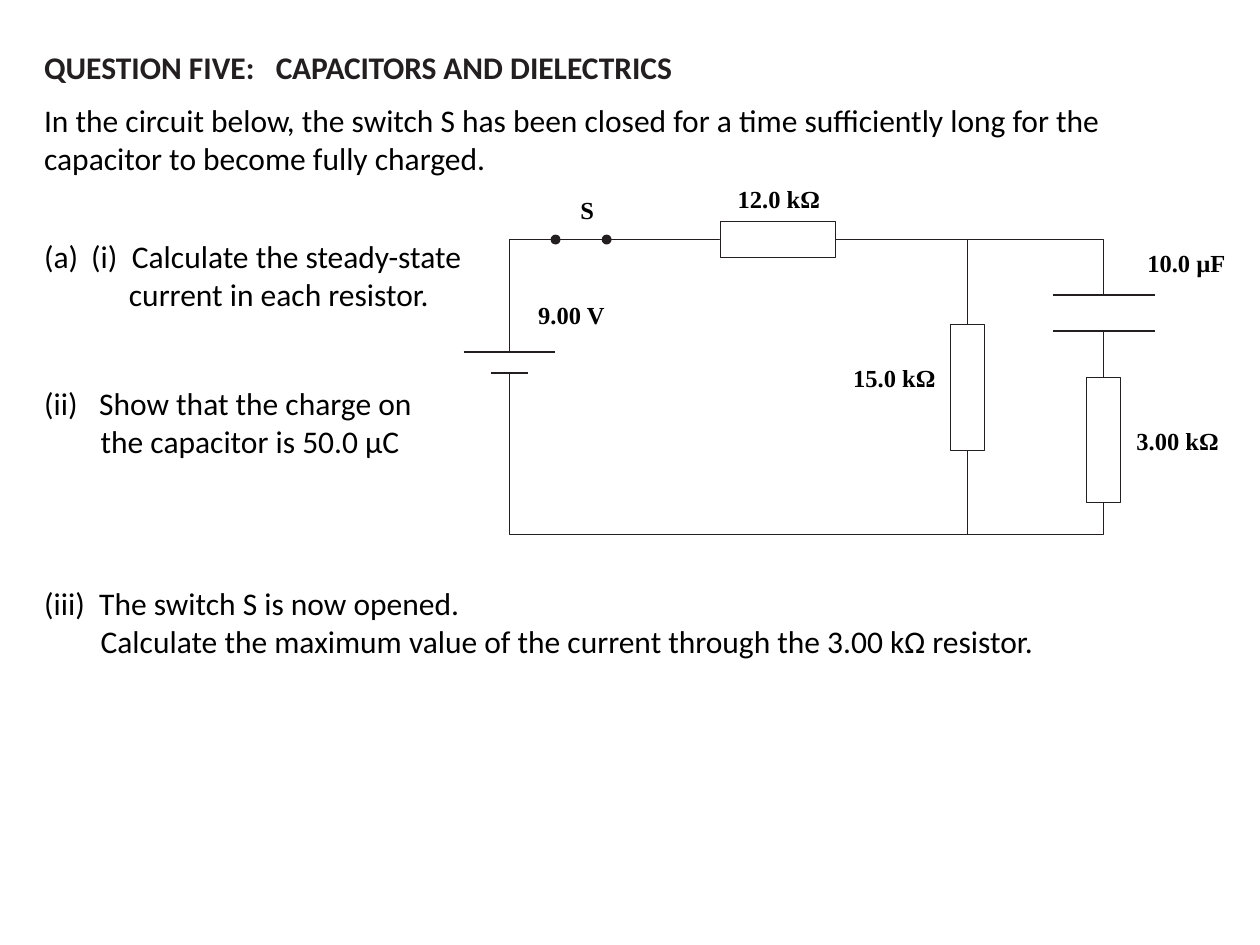
from lxml.etree import SubElement
from pptx import Presentation
from pptx.dml.color import RGBColor
from pptx.enum.shapes import MSO_CONNECTOR as Link, MSO_SHAPE as Preset
from pptx.enum.text import MSO_AUTO_SIZE as AutoSize
from pptx.oxml.ns import qn
from pptx.util import Cm, Pt

INK = RGBColor(0x23, 0x1F, 0x20)
BLACK = RGBColor(0, 0, 0)
WHITE = RGBColor(0xFF, 0xFF, 0xFF)

HEADING = {"name": "Calibri", "size": Pt(18), "bold": True}
BODY = {"name": "Calibri", "size": Pt(18), "bold": False}
LABEL = {"name": "Times New Roman", "size": Pt(14), "bold": True}

TOP, BOTTOM = 0, 2
BATTERY_X, SHUNT_X, CAPACITOR_X = 10.27, 19.5, 22.25
TOP_RAIL, BOTTOM_RAIL = 4.83, 10.78
BATTERY_PLATES = ((7.1, 1.85), (7.52, 0.75))
CAPACITOR_PLATES = ((5.95, 2.05), (6.67, 2.05))
TEXT_LEFT = 0.64

LABELS = (
    ("15.0 kΩ", 16.95, 7.19, 2.18),
    ("12.0 kΩ", 14.62, 3.58, 2.18),
    ("3.00 kΩ", 22.66, 8.46, 2.18),
    ("10.0 µF", 22.88, 4.88, 2.11),
    ("9.00 V", 10.6, 5.92, 1.85),
    ("S", 11.45, 3.81, 0.79),
)

QUESTIONS = (
    (4.65, 9.1, "(i)\tCalculate the steady-state", "current in each resistor.",
     "alphaLcParenBoth", 1, 0.95, 1.71),
    (7.62, 8.69, "Show that the charge on", "the capacitor is 50.0 µC",
     "romanLcParenBoth", 2, 1.11, 1.14),
    (11.65, 21.8, "The switch S is now opened.",
     "Calculate the maximum value of the current through the 3.00 kΩ resistor.",
     "romanLcParenBoth", 3, 1.11, 1.14),
)


def style_run(run, style, color):
    for attribute, value in style.items():
        setattr(run.font, attribute, value)
    run.font.color.rgb = color


def add_text(slide, lines, left, top, width, height, style, color=BLACK, wrap=True):
    box = slide.shapes.add_textbox(Cm(left), Cm(top), Cm(width), Cm(height))
    frame = box.text_frame
    frame.word_wrap = wrap
    frame.auto_size = AutoSize.SHAPE_TO_FIT_TEXT
    frame.text = "\n".join(lines)
    for paragraph in frame.paragraphs:
        for run in paragraph.runs:
            style_run(run, style, color)
    return frame.paragraphs


def set_indent(paragraph, margin, hanging=0):
    properties = paragraph._p.get_or_add_pPr()
    properties.set("marL", str(Cm(margin)))
    properties.set("indent", str(-Cm(hanging)))
    return properties


def add_tab(properties, position):
    tabs = SubElement(properties, qn("a:tabLst"))
    SubElement(tabs, qn("a:tab"), pos=str(Cm(position)), algn="l")


def add_heading(slide):
    heading = add_text(slide, ("QUESTION FIVE:\t",),
                       TEXT_LEFT, 0.85, 16.93, 1.03, HEADING, INK)[0]
    add_tab(heading._p.get_or_add_pPr(), 4.67)
    for words, spacing in (("CAPACITORS ", -10), ("AND DIELECTRICS", 0)):
        run = heading.add_run()
        run.text = words
        style_run(run, HEADING, INK)
        run._r.get_or_add_rPr().set("spc", str(spacing))


def add_question(slide, top, width, first, second, scheme, start, hanging, margin):
    numbered, continued = add_text(
        slide, (first, second), TEXT_LEFT, top, width, 1.8, BODY)
    properties = set_indent(numbered, hanging, hanging)
    SubElement(properties, qn("a:buFont"), typeface="+mj-lt")
    SubElement(properties, qn("a:buAutoNum"), type=scheme, startAt=str(start))
    if "\t" in first:
        add_tab(properties, 1.77)
    set_indent(continued, margin)


def set_line(shape, width):
    shape.line.color.rgb = INK
    shape.line.width = Pt(width)


def add_straight(slide, start, end, width=0.5):
    wire = slide.shapes.add_connector(
        Link.STRAIGHT, *(Cm(value) for value in (*start, *end)))
    set_line(wire, width)
    SubElement(wire._element.spPr, qn("a:effectLst"))
    return wire


def add_bent_wire(slide, *corners):
    start, *rest = [(Cm(x), Cm(y)) for x, y in corners]
    builder = slide.shapes.build_freeform(*start)
    builder.add_line_segments(rest, close=False)
    wire = builder.convert_to_shape()
    wire.shadow.inherit = False
    wire.fill.background()
    set_line(wire, 0.5)


def add_plates(slide, center, plates):
    for y, width in plates:
        add_straight(slide, (center - width / 2, y), (center + width / 2, y), 1)


def add_part(slide, preset, center, middle, width, height, fill):
    part = slide.shapes.add_shape(
        preset, Cm(center - width / 2), Cm(middle - height / 2), Cm(width), Cm(height))
    part.shadow.inherit = False
    part.fill.solid()
    part.fill.fore_color.rgb = fill
    return part


def add_resistor(slide, center, middle, width, height):
    resistor = add_part(slide, Preset.RECTANGLE, center, middle, width, height, WHITE)
    set_line(resistor, 0.5)
    return resistor


def add_contact(slide, center):
    contact = add_part(slide, Preset.OVAL, center, TOP_RAIL, 0.2, 0.2, INK)
    contact.line.fill.background()


def add_circuit(slide):
    battery_top, battery_bottom = ((BATTERY_X, y) for y, _ in BATTERY_PLATES)
    capacitor_top, capacitor_bottom = ((CAPACITOR_X, y) for y, _ in CAPACITOR_PLATES)
    add_bent_wire(slide, battery_top, (BATTERY_X, TOP_RAIL),
                  (CAPACITOR_X, TOP_RAIL), capacitor_top)
    add_bent_wire(slide, capacitor_bottom, (CAPACITOR_X, BOTTOM_RAIL),
                  (BATTERY_X, BOTTOM_RAIL), battery_bottom)

    add_resistor(slide, 15.68, TOP_RAIL, 2.33, 0.74)
    add_resistor(slide, CAPACITOR_X, 8.87, 0.68, 2.53)
    shunt = add_resistor(slide, SHUNT_X, 7.81, 0.68, 2.53)
    shunt_top, shunt_bottom = (SHUNT_X, TOP_RAIL), (SHUNT_X, BOTTOM_RAIL)
    add_straight(slide, shunt_top, shunt_bottom).end_connect(shunt, TOP)
    add_straight(slide, shunt_top, shunt_bottom).begin_connect(shunt, BOTTOM)

    add_plates(slide, BATTERY_X, BATTERY_PLATES)
    add_plates(slide, CAPACITOR_X, CAPACITOR_PLATES)
    for center in (11.2, 12.23):
        add_contact(slide, center)
    for text, left, top, width in LABELS:
        add_text(slide, (text,), left, top, width, 0.86, LABEL, wrap=False)


def main():
    deck = Presentation()
    deck.slide_width, deck.slide_height = Cm(25.4), Cm(19.05)
    slide = deck.slides.add_slide(deck.slide_layouts[6])

    add_heading(slide)
    add_text(slide, ("In the circuit below, the switch S has been closed for a time "
                     "sufficiently long for the capacitor to become fully charged.",),
             TEXT_LEFT, 1.91, 24.13, 1.8, BODY)
    add_circuit(slide)
    for question in QUESTIONS:
        add_question(slide, *question)
    deck.save("out.pptx")


if __name__ == "__main__":
    main()
